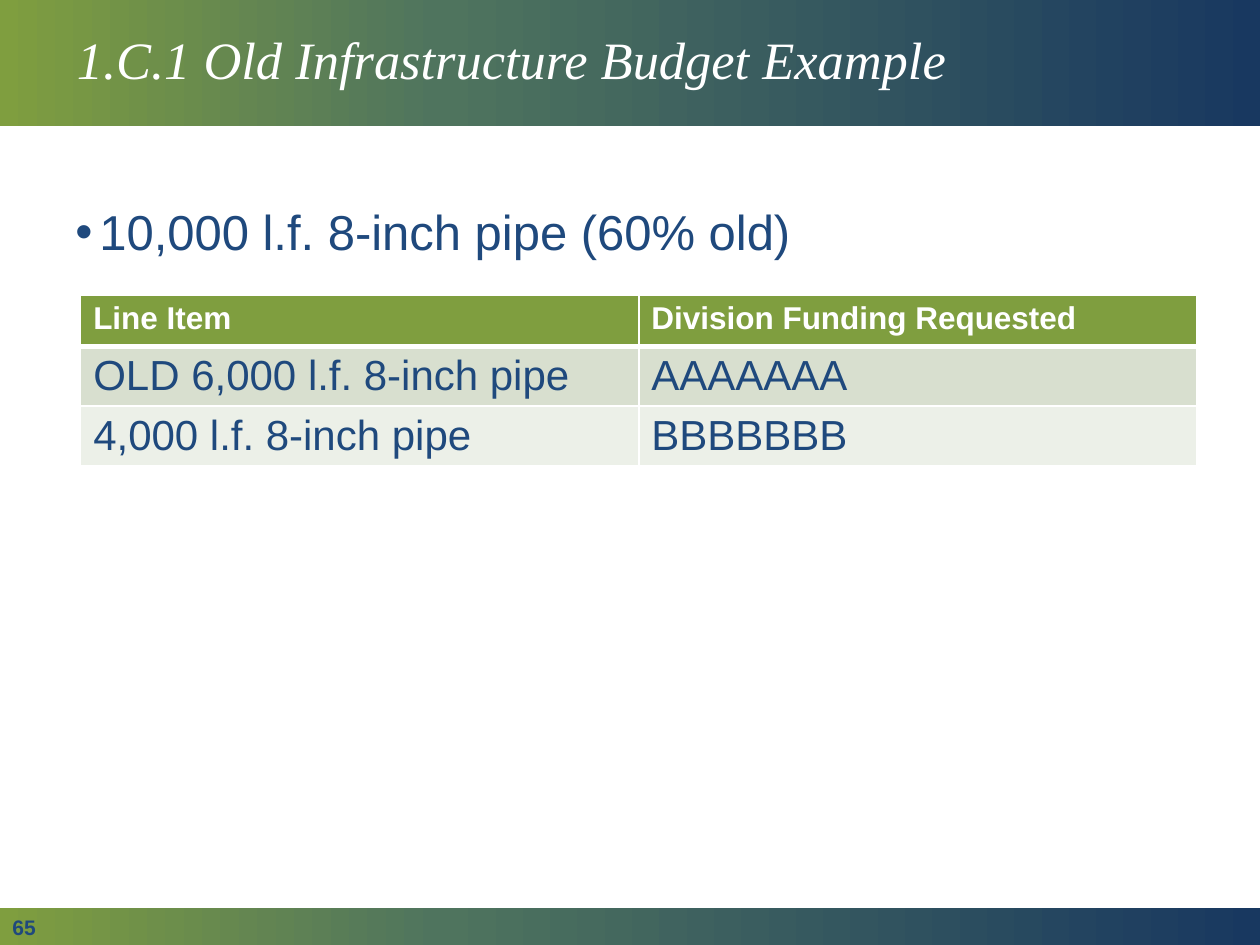
from lxml.etree import SubElement
from pptx import Presentation
from pptx.dml.color import RGBColor
from pptx.enum.shapes import MSO_SHAPE
from pptx.enum.text import MSO_ANCHOR, MSO_AUTO_SIZE, PP_ALIGN
from pptx.oxml import parse_xml
from pptx.oxml.ns import nsdecls, qn
from pptx.util import Inches, Pt

TITLE = "1.C.1 Old Infrastructure Budget Example"
PIPE_SUMMARY = "10,000 l.f. 8-inch pipe (60% old)"
PAGE_NUMBER = "65"
BUDGET = [
    ("Line Item", "Division Funding Requested"),
    ("OLD 6,000 l.f. 8-inch pipe", "AAAAAAA"),
    ("4,000 l.f. 8-inch pipe", "BBBBBBB"),
]

WHITE, NAVY, GREEN = "FFFFFF", "1F497D", "7F9E3F"
ROW_FILLS = [GREEN, "D8DFCF", "ECF0E8"]
BAR_STOPS = [(0, GREEN), (35, "4F745E"), (100, "183860")]
BARS = [(0, 0, 10, 1), (0, 7.21, 10, 0.3)]
COLUMN_WIDTH, ROW_HEIGHT = 4.43, 0.41

TITLE_FONT = dict(name="Times New Roman", size=Pt(30), italic=True, bold=False, color=WHITE)
BULLET_FONT = dict(name="Arial", size=Pt(28), color=NAVY)
NUMBER_FONT = dict(name="Arial", size=Pt(12), bold=True, color=NAVY)
HEADER_FONT = dict(name="Arial", size=Pt(18), bold=True, color=WHITE)
BODY_FONT = dict(name="Arial", size=Pt(24), bold=False, color=NAVY)


def set_color(color_format, hex_color):
    color_format.rgb = RGBColor.from_string(hex_color)


def set_font(font, formats):
    for attribute, value in formats.items():
        if attribute == "color":
            set_color(font.color, value)
        else:
            setattr(font, attribute, value)


def place(shape, left, top, width, height):
    shape.left, shape.top = Inches(left), Inches(top)
    shape.width, shape.height = Inches(width), Inches(height)


def write(shape, text, formats, anchor):
    frame = shape.text_frame
    frame.text = text
    frame.word_wrap = True
    frame.auto_size = MSO_AUTO_SIZE.NONE
    frame.vertical_anchor = anchor
    paragraph = frame.paragraphs[0]
    paragraph.alignment = PP_ALIGN.LEFT
    set_font(paragraph.runs[0].font, formats)
    return paragraph


def add_gradient_bar(slide, box):
    bar = slide.shapes.add_shape(MSO_SHAPE.RECTANGLE, *map(Inches, box))
    bar.shadow.inherit = False
    bar.line.fill.background()
    stops = "".join(
        f'<a:gs pos="{position * 1000}"><a:srgbClr val="{color}"/></a:gs>'
        for position, color in BAR_STOPS
    )
    bar.element.spPr.find(qn("a:prstGeom")).addnext(parse_xml(
        f'<a:gradFill {nsdecls("a")}><a:gsLst>{stops}</a:gsLst>'
        '<a:lin ang="0" scaled="0"/></a:gradFill>'
    ))


def set_borders(cell, widths):
    properties = cell._tc.get_or_add_tcPr()
    for side, points in widths.items():
        line = SubElement(properties, qn(f"a:ln{side}"), w=str(Pt(points)))
        SubElement(SubElement(line, qn("a:solidFill")), qn("a:srgbClr"), val=WHITE)


def add_bullet(paragraph, indent):
    properties = paragraph._p.get_or_add_pPr()
    properties.set("marL", str(Inches(indent)))
    properties.set("indent", str(-Inches(indent)))
    SubElement(properties, qn("a:buFont"), typeface="Arial")
    SubElement(properties, qn("a:buChar"), char="•")


def add_budget_table(slide):
    rows, columns = len(BUDGET), len(BUDGET[0])
    table = slide.shapes.add_table(
        rows, columns, Inches(0.64), Inches(2.34),
        Inches(COLUMN_WIDTH * columns), Inches(ROW_HEIGHT * rows),
    ).table
    for r, (row, fill) in enumerate(zip(BUDGET, ROW_FILLS)):
        for c, text in enumerate(row):
            cell = table.cell(r, c)
            set_borders(cell, {"L": 1, "R": 1, "T": 3 if r == 1 else 1, "B": 3 if r == 0 else 1})
            cell.fill.solid()
            set_color(cell.fill.fore_color, fill)
            cell.text = text
            set_font(cell.text_frame.paragraphs[0].runs[0].font,
                     BODY_FONT if r else HEADER_FONT)


def main():
    deck = Presentation()
    deck.slide_width, deck.slide_height = Inches(10), Inches(7.5)
    slide = deck.slides.add_slide(deck.slide_layouts[5])

    for box in BARS:
        add_gradient_bar(slide, box)

    title = slide.shapes.title
    slide.shapes._spTree.append(title.element)  # in front of the bars
    place(title, 0.51, 0, 9.1, 1)
    write(title, TITLE, TITLE_FONT, MSO_ANCHOR.MIDDLE).line_spacing = 0.9

    number = slide.shapes.add_textbox(0, Inches(7.21), Inches(2.25), Inches(0.29))
    write(number, PAGE_NUMBER, NUMBER_FONT, MSO_ANCHOR.MIDDLE)

    summary = slide.shapes.add_textbox(Inches(0.5), Inches(1.6), Inches(9.01), Inches(0.55))
    bullet = write(summary, PIPE_SUMMARY, BULLET_FONT, MSO_ANCHOR.TOP)
    bullet.line_spacing = 0.9
    add_bullet(bullet, 0.19)

    add_budget_table(slide)
    deck.save("out.pptx")


if __name__ == "__main__":
    main()
